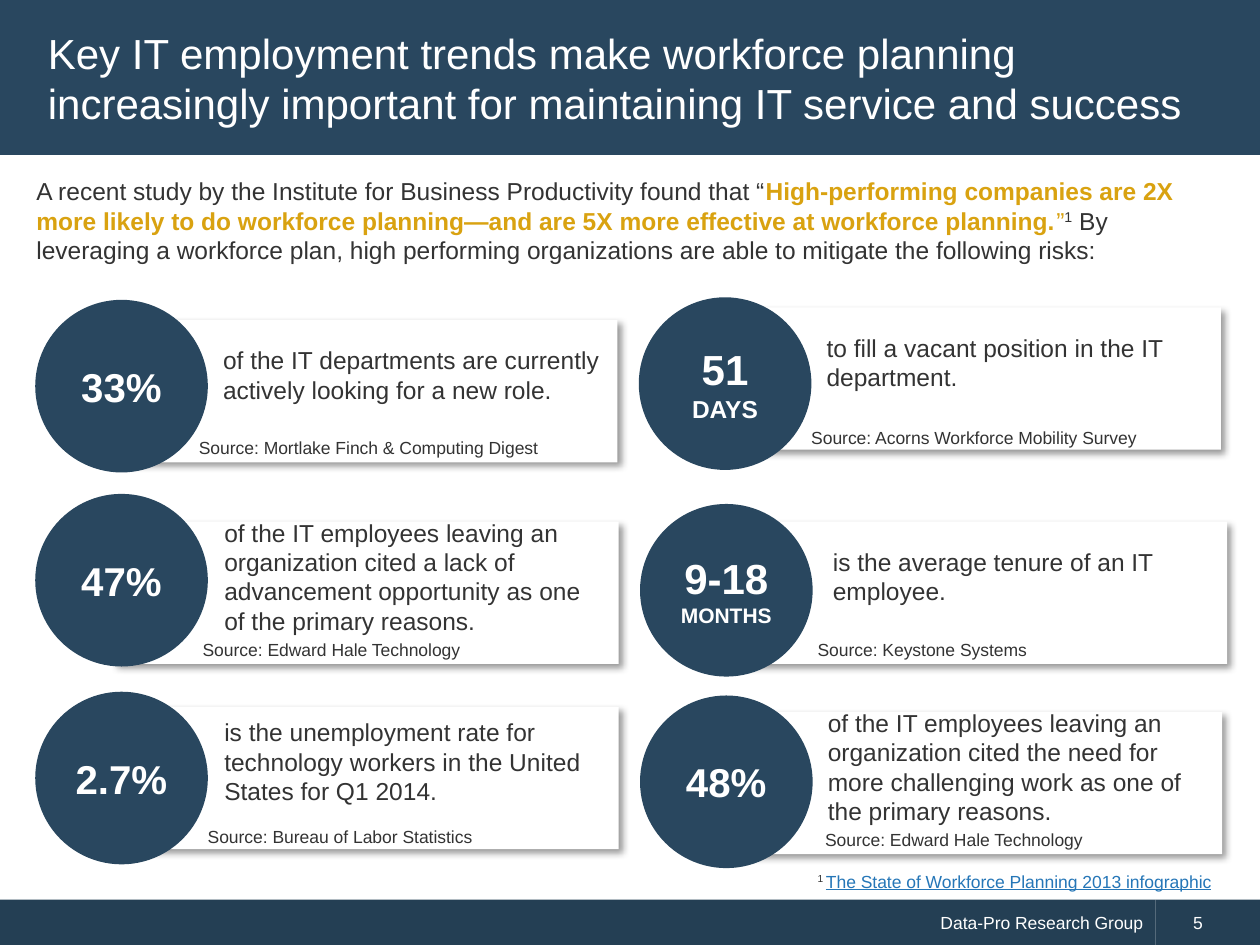
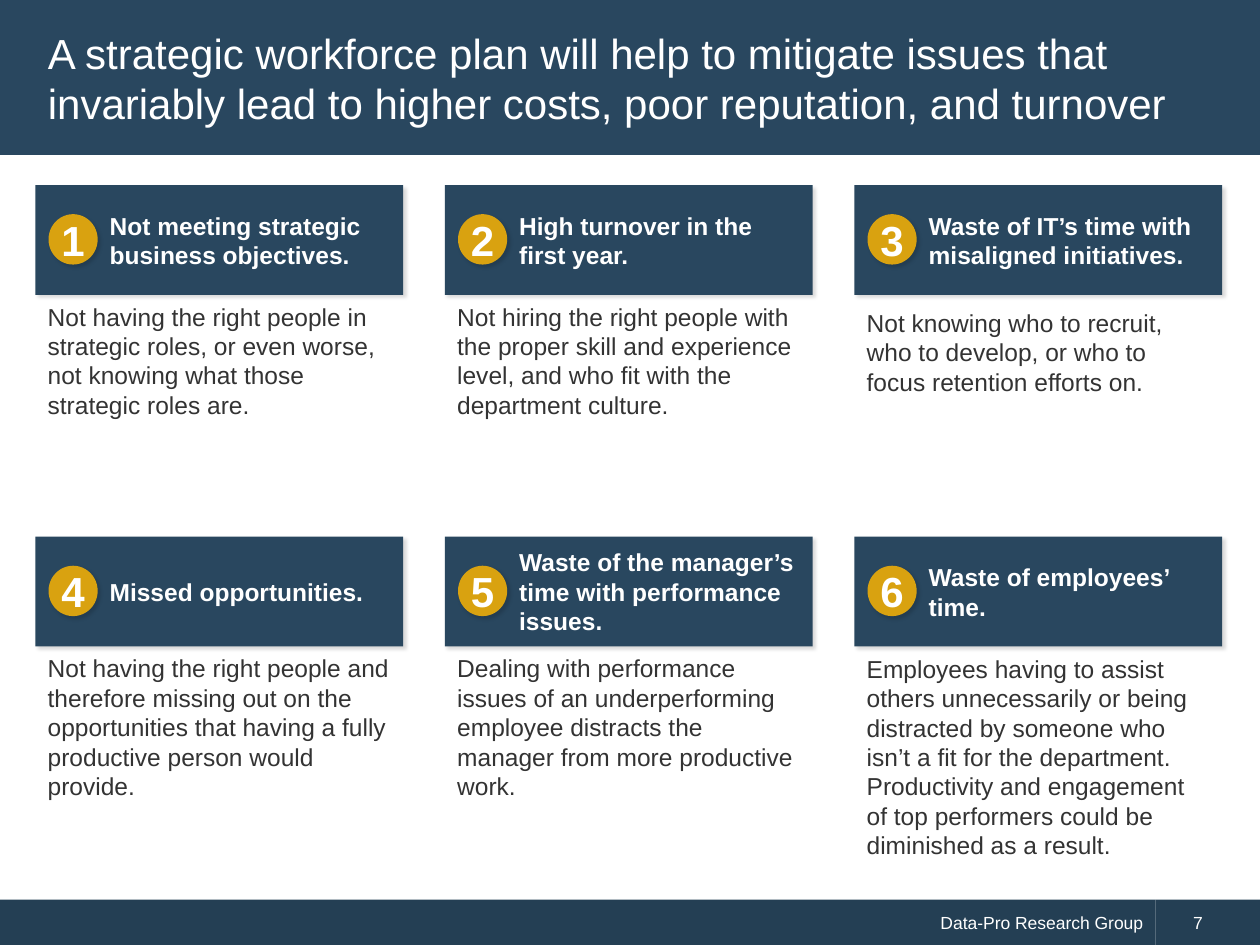
import lxml.etree
import pptx
import pptx.dml.color
import pptx.enum.shapes
import pptx.enum.text
import pptx.oxml.ns
import pptx.util

COLORS = {
    "navy": "29475F", "footer": "243F54", "gold": "D9A210",
    "white": "FFFFFF", "text": "333333", "link": "2576B7", "shadow": "000000",
}
FONT = "Arial"
COLUMNS, ROWS = 100, 75
TITLE_ROWS = 12.3
FOOTER_TOP, FOOTER_ROWS = 71.4, 3.6
CIRCLE = 13.7
CARD_SIZE = (40.1, 11.3)
HEADER_SIZE = (29.2, 8.7)
CARD_SHADOW = (40, 4, 3)  # opacity in percent, blur and distance in points
HEADER_SHADOW = (15, 2, 2)

ALIGN = pptx.enum.text.PP_ALIGN
ANCHOR = pptx.enum.text.MSO_ANCHOR
RECTANGLE = pptx.enum.shapes.MSO_SHAPE.RECTANGLE
OVAL = pptx.enum.shapes.MSO_SHAPE.OVAL

INTRO = [
    ("A recent study by the Institute for Business Productivity found that “", {}),
    ("High-performing companies are 2X more likely to do workforce planning"
     "—and are 5X more effective at workforce planning.", {"color": "gold", "bold": True}),
    ("”", {"color": "gold"}),
    ("1", {"superscript": True}),
    (" By leveraging a workforce plan, high performing organizations are able "
     "to mitigate the following risks:", {}),
]
FOOTNOTE = [
    ("1 ", {"superscript": True}),
    ("The State of Workforce Planning 2013 infographic", {"color": "link", "underline": True}),
]

# circle corner, card corner, source corner, figure lines with sizes, finding, source
TRENDS = [
    ((2.8, 23.8), (8.9, 25.4), (14.8, 34.2), [("33%", 23)],
     "of the IT departments are currently actively looking for a new role.",
     "Mortlake Finch & Computing Digest"),
    ((50.7, 23.6), (56.8, 24.4), (63.4, 33.4), [("51", 24), ("DAYS", 14)],
     "to fill a vacant position in the IT department.",
     "Acorns Workforce Mobility Survey"),
    ((2.8, 39.2), (9, 41.4), (15.1, 50.2), [("47%", 23)],
     "of the IT employees leaving an organization cited a lack of advancement "
     "opportunity as one of the primary reasons.",
     "Edward Hale Technology"),
    ((50.8, 40), (57.3, 41.4), (63.9, 50.2), [("9-18", 24), ("MONTHS", 12)],
     "is the average tenure of an IT employee.",
     "Keystone Systems"),
    ((2.8, 54.9), (9, 56.1), (15.5, 65.1), [("2.7%", 23)],
     "is the unemployment rate for technology workers in the United States for Q1 2014.",
     "Bureau of Labor Statistics"),
    ((50.8, 55.2), (56.9, 56.5), (64.5, 65.3), [("48%", 23)],
     "of the IT employees leaving an organization cited the need for more "
     "challenging work as one of the primary reasons.",
     "Edward Hale Technology"),
]

# heading, explanation, rows the explanation takes
ISSUES = [
    ("Not meeting strategic business objectives.",
     "Not having the right people in strategic roles, or even worse, not knowing "
     "what those strategic roles are.", 10.4),
    ("High turnover in the first year.",
     "Not hiring the right people with the proper skill and experience level, "
     "and who fit with the department culture.", 10.4),
    ("Waste of IT’s time with misaligned initiatives.",
     "Not knowing who to recruit, who to develop, or who to focus retention efforts on.", 9.1),
    ("Missed opportunities.",
     "Not having the right people and therefore missing out on the opportunities "
     "that having a fully productive person would provide.", 12.8),
    ("Waste of the manager’s time with performance issues.",
     "Dealing with performance issues of an underperforming employee distracts "
     "the manager from more productive work.", 12.8),
    ("Waste of employees’ time.",
     "Employees having to assist others unnecessarily or being distracted by someone "
     "who isn’t a fit for the department. Productivity and engagement of top "
     "performers could be diminished as a result.", 17.5),
]


def rgb(name):
    return pptx.dml.color.RGBColor.from_string(COLORS[name])


class SlideBuilder:
    """Adds styled elements to the current slide, placed in grid columns and rows."""

    def __init__(self, deck):
        self.deck = deck
        self.slide = None

    def place(self, left, top, width, height):
        column, row = self.deck.slide_width / COLUMNS, self.deck.slide_height / ROWS
        return [int(value) for value in (left * column, top * row, width * column, height * row)]

    def new_slide(self, title, number):
        self.slide = self.deck.slides.add_slide(self.deck.slide_layouts[5])
        self.title(title)
        self.footer(number)

    def title(self, text):
        band = self.slide.shapes.title
        band.left, band.top, band.width, band.height = self.place(0, 0, COLUMNS, TITLE_ROWS)
        band.fill.solid()
        band.fill.fore_color.rgb = rgb("navy")
        self.set_text(band, [text], 24, "white", left=0.38)

    def footer(self, number):
        split = 91.7
        owner = self.shape(RECTANGLE, (0, FOOTER_TOP, split, FOOTER_ROWS), "footer")
        self.set_text(owner, ["Data-Pro Research Group"], 10, "white", align=ALIGN.RIGHT)
        page = self.shape(RECTANGLE, (split, FOOTER_TOP, COLUMNS - split, FOOTER_ROWS), "footer")
        self.set_text(page, [str(number)], 10, "white", left=0.3)

    def shape(self, kind, area, fill, shadow=None):
        box = self.slide.shapes.add_shape(kind, *self.place(*area))
        box.fill.solid()
        box.fill.fore_color.rgb = rgb(fill)
        box.line.fill.background()
        box.shadow.inherit = False
        if shadow:
            self.cast_shadow(box, *shadow)
        return box

    def cast_shadow(self, box, opacity, blur, distance):
        qn = pptx.oxml.ns.qn
        effects = box.element.spPr.find(qn("a:effectLst"))
        outer = lxml.etree.SubElement(
            effects, qn("a:outerShdw"), blurRad=str(pptx.util.Pt(blur)),
            dist=str(pptx.util.Pt(distance)), dir=str(45 * 60000), algn="tl", rotWithShape="0")
        color = lxml.etree.SubElement(outer, qn("a:srgbClr"), val=COLORS["shadow"])
        lxml.etree.SubElement(color, qn("a:alpha"), val=str(opacity * 1000))

    def text(self, area, paragraphs, size, anchor=ANCHOR.TOP):
        box = self.slide.shapes.add_textbox(*self.place(*area))
        self.set_text(box, paragraphs, size, "text", anchor=anchor)

    def set_text(self, box, paragraphs, size, color, bold=False, align=ALIGN.LEFT,
                 anchor=ANCHOR.MIDDLE, left=0.1, right=0.1, bottom=0.05):
        """Fill a box; a paragraph is a string, a (string, size) pair or a list of spans."""
        frame = box.text_frame
        frame.word_wrap = True
        frame.auto_size = pptx.enum.text.MSO_AUTO_SIZE.NONE
        frame.vertical_anchor = anchor
        frame.margin_left = pptx.util.Inches(left)
        frame.margin_right = pptx.util.Inches(right)
        frame.margin_bottom = pptx.util.Inches(bottom)
        for index, content in enumerate(paragraphs):
            para = frame.paragraphs[0] if index == 0 else frame.add_paragraph()
            para.alignment = align
            para.font.name = FONT
            para.font.bold = bold
            para.font.color.rgb = rgb(color)
            para_size = size
            if isinstance(content, tuple):
                content, para_size = content
            para.font.size = pptx.util.Pt(para_size)
            if isinstance(content, str):
                para.add_run().text = content
            else:
                self.add_spans(para, content)

    def add_spans(self, para, spans):
        for text, style in spans:
            span = para.add_run()
            span.text = text
            if "color" in style:
                span.font.color.rgb = rgb(style["color"])
            if "bold" in style:
                span.font.bold = True
            if "underline" in style:
                span.font.underline = True
            if "superscript" in style:
                span.font._element.set("baseline", "30000")

    def trend(self, circle_at, card_at, source_at, figure, finding, source):
        card = self.shape(RECTANGLE, (*card_at, *CARD_SIZE), "white", CARD_SHADOW)
        self.set_text(card, [finding], 14, "text", left=0.88, bottom=0.31)
        circle = self.shape(OVAL, (*circle_at, CIRCLE, CIRCLE), "navy")
        self.set_text(circle, figure, 23, "white", bold=True, align=ALIGN.CENTER)
        self.text((*source_at, 30, 2.5), ["Source: " + source], 10)

    def issue(self, left, top, number, heading, explanation, rows):
        width, height = HEADER_SIZE
        header = self.shape(RECTANGLE, (left, top, width, height), "navy", HEADER_SHADOW)
        self.set_text(header, [heading], 14, "white", bold=True, left=0.59)
        badge = self.shape(OVAL, (left + 1.05, top + 2.3, 3.9, 4), "gold", HEADER_SHADOW)
        self.set_text(badge, [str(number)], 24, "white", bold=True, align=ALIGN.CENTER,
                      left=0.04, right=0.04)
        self.text((left, top + height, width, rows), [explanation], 14, ANCHOR.MIDDLE)


def build_trends(builder):
    builder.new_slide("Key IT employment trends make workforce planning increasingly "
                      "important for maintaining IT service and success", 5)
    builder.text((1.9, 13.5, 95.2, 8.1), [INTRO], 14)
    for trend in TRENDS:
        builder.trend(*trend)
    builder.text((63.9, 68.6, 34.3, 2.7), [FOOTNOTE], 10)


def build_issues(builder):
    builder.new_slide("A strategic workforce plan will help to mitigate issues that "
                      "invariably lead to higher costs, poor reputation, and turnover", 7)
    for index, issue in enumerate(ISSUES):
        row, column = divmod(index, 3)
        builder.issue(2.8 + 32.5 * column, 14.7 + 27.9 * row, index + 1, *issue)


def main():
    deck = pptx.Presentation()
    deck.slide_width = pptx.util.Inches(10)
    deck.slide_height = pptx.util.Inches(7.5)
    builder = SlideBuilder(deck)
    build_trends(builder)
    build_issues(builder)
    deck.save("out.pptx")


if __name__ == "__main__":
    main()
